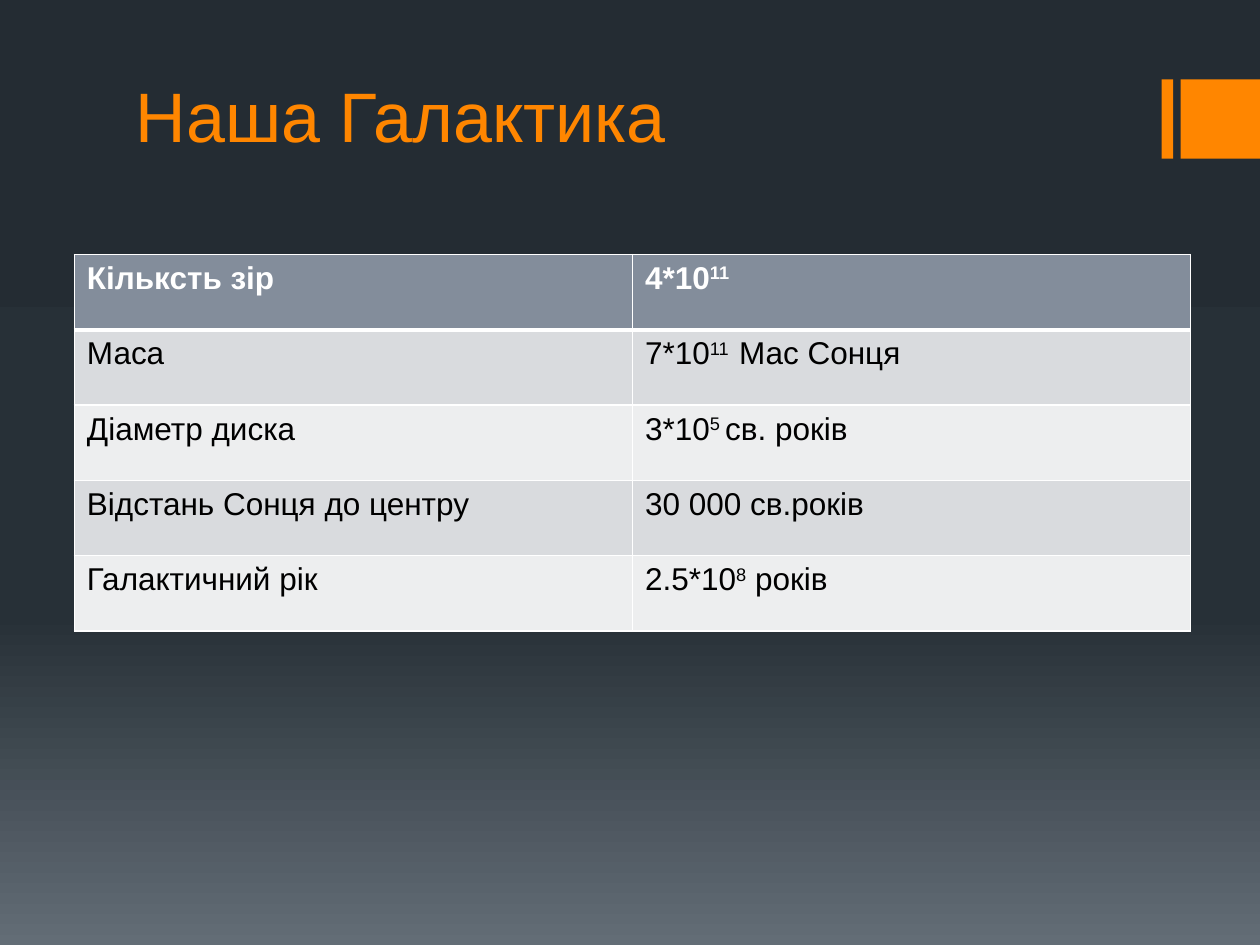
from copy import deepcopy

from lxml import etree
from pptx import Presentation
from pptx import util as u
from pptx.dml.color import RGBColor
from pptx.enum import shapes, text
from pptx.oxml.ns import qn

FONT = "Arial"
ORANGE = RGBColor(0xFF, 0x86, 0x00)
WHITE = RGBColor(0xFF, 0xFF, 0xFF)
BLACK = RGBColor(0x00, 0x00, 0x00)
HEADER = RGBColor(0x83, 0x8D, 0x9B)
BANDS = (RGBColor(0xED, 0xEE, 0xEF), RGBColor(0xD9, 0xDB, 0xDE))
BACKDROP = (
    (0, RGBColor(0x24, 0x2C, 0x33)),
    (0.65, RGBColor(0x27, 0x30, 0x37)),
    (1, RGBColor(0x63, 0x6D, 0x76)),
)

# fmt: off
GALAXY_FACTS = (
    ("Кільксть зір", ("4*10", "11")),
    ("Маса", ("7*10", "11  ", "Мас Сонця")),
    ("Діаметр диска", ("3*10", "5 ", "св. років")),
    ("Відстань Сонця до центру", ("30 000 св.років",)),
    ("Галактичний рік", ("2.5*10", "8", " років")),
)
# fmt: on


def set_backdrop(s):
    fill = s.background.fill
    fill.gradient()
    fill.gradient_angle = 270
    gs = s.background._cSld.find(".//" + qn("a:gs"))
    gs.addnext(deepcopy(gs))
    for stop, (position, color) in zip(fill.gradient_stops, BACKDROP):
        stop.position = position
        stop.color.rgb = color


def add_bar(s, left, width):
    sp = s.shapes.add_shape(
        shapes.MSO_SHAPE.RECTANGLE,
        u.Inches(left), u.Inches(0.63), u.Inches(width), u.Inches(0.63),
    )
    sp.shadow.inherit = False
    sp.fill.solid()
    sp.fill.fore_color.rgb = ORANGE
    sp.line.fill.background()


def style_run(r, size, color, bold=False):
    r.font.name = FONT
    r.font.size = u.Pt(size)
    r.font.color.rgb = color
    r.font.bold = bold


def add_title(s, title):
    sp = s.shapes.add_textbox(
        u.Inches(0.98), u.Inches(0.03), u.Inches(8), u.Inches(1.26)
    )
    tf = sp.text_frame
    tf.word_wrap = True
    tf.vertical_anchor = text.MSO_ANCHOR.BOTTOM
    tf.text = title
    style_run(tf.paragraphs[0].runs[0], 40, ORANGE)


def set_borders(cell, bottom):
    tcPr = cell._tc.get_or_add_tcPr()
    widths = (("a:lnL", 1), ("a:lnR", 1), ("a:lnT", 1), ("a:lnB", bottom))
    for i, (tag, width) in enumerate(widths):
        ln = etree.Element(qn(tag), w=str(u.Pt(width)))
        fill = etree.SubElement(ln, qn("a:solidFill"))
        etree.SubElement(fill, qn("a:srgbClr"), val=str(WHITE))
        tcPr.insert(i, ln)


def fill_cell(cell, parts, row):
    is_header = row == 0
    cell.fill.solid()
    cell.fill.fore_color.rgb = HEADER if is_header else BANDS[row % 2]
    set_borders(cell, 3 if is_header else 1)
    p = cell.text_frame.paragraphs[0]
    for i, part in enumerate(parts):
        r = p.add_run()
        r.text = part
        style_run(r, 18, WHITE if is_header else BLACK, is_header)
        if i == 1:
            r._r.get_or_add_rPr().set("baseline", "30000")


def add_facts_table(s, facts):
    table = s.shapes.add_table(
        len(facts), 2,
        u.Inches(0.59), u.Inches(2.02), u.Inches(8.86), u.Inches(2.99),
    ).table
    for row, (label, value) in enumerate(facts):
        fill_cell(table.cell(row, 0), (label,), row)
        fill_cell(table.cell(row, 1), value, row)


def main():
    prs = Presentation()
    prs.slide_width = u.Inches(10)
    prs.slide_height = u.Inches(7.5)
    s = prs.slides.add_slide(prs.slide_layouts[6])
    set_backdrop(s)
    add_bar(s, 9.22, 0.09)
    add_bar(s, 9.37, 0.63)
    add_title(s, "Наша Галактика")
    add_facts_table(s, GALAXY_FACTS)
    prs.save("out.pptx")


if __name__ == "__main__":
    main()
